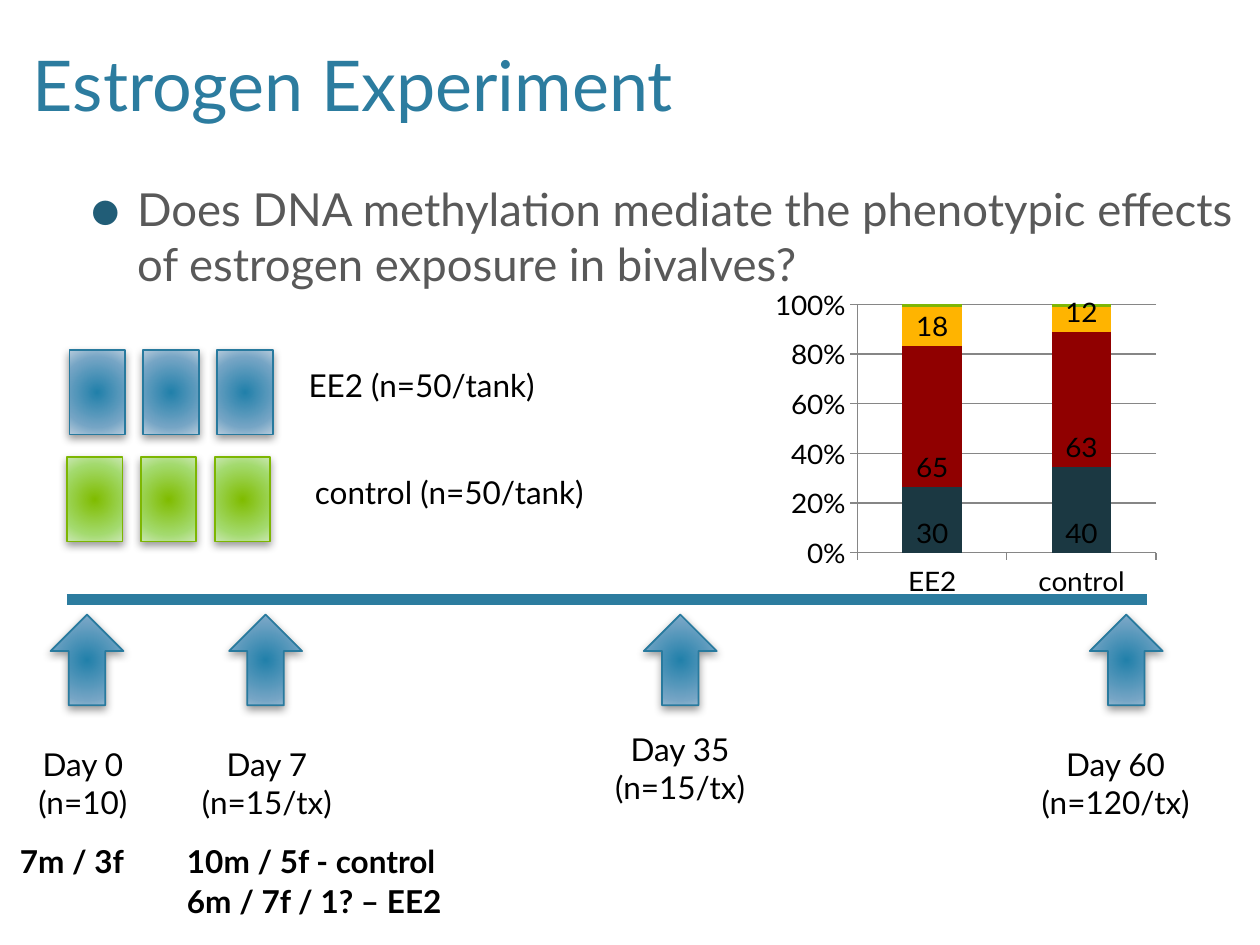
from lxml.etree import SubElement, fromstring
from pptx import Presentation
from pptx.chart.data import CategoryChartData as ChartData
from pptx.dml.color import RGBColor as RGB
from pptx.enum.chart import XL_CHART_TYPE as Kind, XL_LABEL_POSITION as Spot
from pptx.enum.chart import XL_LEGEND_POSITION as Side, XL_TICK_MARK as Tick
from pptx.enum.shapes import MSO_CONNECTOR as Link, MSO_SHAPE as Form
from pptx.enum.text import MSO_ANCHOR as Anchor, MSO_AUTO_SIZE as Fit
from pptx.enum.text import PP_ALIGN as Align
from pptx.oxml.ns import qn
from pptx.util import Cm, Pt

FONT = "Lato"
TEAL = RGB(0x2C, 0x7C, 0x9F)
DEEP = RGB(0x21, 0x5D, 0x77)
GREY = RGB(0x59, 0x59, 0x59)
RULE = RGB(0x86, 0x86, 0x86)
BLACK = RGB(0, 0, 0)
# Edge colour, then the gradient from centre to rim
BLUE = (RGB(0x28, 0x7A, 0x9E),
        (RGB(0x21, 0x80, 0xAA), RGB(0x75, 0xA5, 0xC5), RGB(0xB8, 0xCC, 0xDC)))
GREEN = (RGB(0x7D, 0xB6, 0x02),
         (RGB(0x80, 0xBC, 0x00), RGB(0xA3, 0xDA, 0x6D), RGB(0xCB, 0xE7, 0xB4)))
SERIES = (
    ("M", (30, 40), RGB(0x1B, 0x38, 0x42)),
    ("F", (65, 63), RGB(0x90, 0x00, 0x00)),
    ("U", (18, 12), RGB(0xFF, 0xB4, 0x00)),
    ("H", (1, 1), RGB(0x7E, 0xB6, 0x06)),
)
# Arrow left, label left, label top, label width, lines
DAYS = (
    (0, -0.8, 2.48, 2.9, ("Day 0", "(n=10)")),
    (3.6, 2.57, 2.48, 3.58, ("Day 7", "(n=15/tx)")),
    (11.96, 10.9, 2.18, 3.58, ("Day 35", "(n=15/tx)")),
    (20.95, 19.45, 2.48, 4.04, ("Day 60", "(n=120/tx)")),
)
NS = 'xmlns:a="http://schemas.openxmlformats.org/drawingml/2006/main"'


def place(box):
    return [Cm(n) for n in box]


def style(font, size, color=BLACK, bold=False):
    font.name, font.size, font.bold = FONT, Pt(size), bold
    font.color.rgb = color


def write(para, text, size, color=BLACK, bold=False):
    run = para.add_run()
    run.text = text
    style(run.font, size, color, bold)


def label(slide, box, lines, align=Align.LEFT, bold=False):
    frame = slide.shapes.add_textbox(*place(box)).text_frame
    frame.word_wrap = True
    for i, line in enumerate(lines):
        para = frame.add_paragraph() if i else frame.paragraphs[0]
        para.alignment = align
        write(para, line, 18, bold=bold)


def glow(slide, form, box, tone):
    """Add a shape with a round gradient and a soft shadow."""
    edge, shades = tone
    shape = slide.shapes.add_shape(form, *place(box))
    shape.line.color.rgb = edge
    shape.line.width = Pt(1)
    stops = "".join(f'<a:gs pos="{pos}000"><a:srgbClr val="{shade}"/></a:gs>'
                    for pos, shade in zip((0, 69, 100), shades))
    props = shape.element.spPr
    props.find(qn("a:prstGeom")).addnext(fromstring(
        f'<a:gradFill {NS} rotWithShape="1"><a:gsLst>{stops}</a:gsLst>'
        '<a:path path="circle"><a:fillToRect l="100000" t="100000" '
        'r="100000" b="100000"/></a:path></a:gradFill>'))
    props.append(fromstring(
        f'<a:effectLst {NS}><a:outerShdw blurRad="{Pt(5)}" dist="{Pt(2)}" '
        'dir="5400000" rotWithShape="0"><a:srgbClr val="000000">'
        '<a:alpha val="40000"/></a:srgbClr></a:outerShdw></a:effectLst>'))


def hold(holder, box):
    """Move a placeholder and return its first paragraph."""
    holder.left, holder.top, holder.width, holder.height = place(box)
    frame = holder.text_frame
    frame.auto_size = Fit.NONE
    frame.vertical_anchor = Anchor.TOP
    para = frame.paragraphs[0]
    para.alignment = Align.LEFT
    return para


def head(slide, box):
    write(hold(slide.shapes.title, box), "Estrogen Experiment", 40, TEAL)


def ask(slide, box):
    para = hold(slide.placeholders[1], box)
    para.space_before, para.space_after = Pt(6), Pt(12)
    props = para._p.get_or_add_pPr()
    props.set("marL", str(Cm(1.9)))
    props.set("indent", str(Cm(-0.94)))
    SubElement(SubElement(props, qn("a:buClr")), qn("a:srgbClr"), val=str(DEEP))
    SubElement(props, qn("a:buSzPct"), val="110000")
    SubElement(props, qn("a:buFont"), typeface=FONT)
    SubElement(props, qn("a:buChar"), char="●")
    write(para, "Does DNA methylation mediate the phenotypic effects "
                "of estrogen exposure in bivalves?", 26, GREY)


def tanks(slide, box, tone, text, gap):
    x, y, wide, high = box
    for i in range(3):
        glow(slide, Form.RECTANGLE, (x + 1.49 * i, y, 1.12, high), tone)
    label(slide, (x + gap, y + 0.2, wide - gap, 1.02), [text])


def course(slide, box):
    """Draw the time line with its sampling days."""
    x, y, wide, high = box
    line = slide.shapes.add_connector(
        Link.STRAIGHT, *place((x + 0.33, y, x + 22.1, y)))
    line.line.color.rgb = TEAL
    line.line.width = Pt(6)
    SubElement(line._element.spPr, qn("a:effectLst"))
    for left, side, drop, span, lines in DAYS:
        glow(slide, Form.UP_ARROW, (x + left, y + 0.3, 1.47, 1.83), BLUE)
        label(slide, (x + side, y + 2.8 + drop - 2.48, span, 1.8),
              lines, Align.CENTER)
    base = y + high - 1.84
    label(slide, (x - 1.02, base, 2.9, 1.02), ["7m / 3f"], Align.CENTER, True)
    for i, text in enumerate(("10m / 5f - control", "6m / 7f / 1? – EE2")):
        label(slide, (x + 2.5, base + 0.82 * i, 7.9, 1.02), [text], bold=True)


def layout(plot):
    """Fix the inner plot area as shares of the chart."""
    old = plot.find(qn("c:layout"))
    if old is not None:
        plot.remove(old)
    new = plot.makeelement(qn("c:layout"))
    plot.insert(0, new)
    man = SubElement(new, qn("c:manualLayout"))
    for tag, val in (("layoutTarget", "inner"), ("xMode", "edge"),
                     ("yMode", "edge"), ("x", "0.162"), ("y", "0.044"),
                     ("w", "0.528"), ("h", "0.843")):
        SubElement(man, qn("c:" + tag), val=val)


def bars(slide, box):
    data = ChartData()
    data.categories = ["EE2", "control"]
    for name, vals, _ in SERIES:
        data.add_series(name, vals)
    chart = slide.shapes.add_chart(
        Kind.COLUMN_STACKED_100, *place(box), data).chart
    style(chart.font, 16)
    chart.has_title = False
    chart.has_legend = True
    chart.legend.position = Side.RIGHT
    chart.legend.include_in_layout = False
    plot = chart.plots[0]
    plot.gap_width, plot.overlap = 150, 100
    plot.vary_by_categories = False
    for ser, (name, _, color) in zip(plot.series, SERIES):
        ser.format.fill.solid()
        ser.format.fill.fore_color.rgb = color
        if name != "H":
            ser.data_labels.show_value = True
            ser.data_labels.position = Spot.INSIDE_BASE
    for axis in (chart.category_axis, chart.value_axis):
        axis.major_tick_mark = Tick.OUTSIDE
        axis.minor_tick_mark = Tick.NONE
        axis.format.line.color.rgb = RULE
    axis.has_major_gridlines = True
    axis.major_gridlines.format.line.color.rgb = RULE
    axis.major_unit = 0.2
    axis.tick_labels.number_format = "0%"
    axis.tick_labels.number_format_is_linked = False
    layout(chart._chartSpace.chart.plotArea)


def main():
    deck = Presentation()
    deck.slide_width, deck.slide_height = Cm(25.4), Cm(19.05)
    slide = deck.slides.add_slide(deck.slide_layouts[1])
    head(slide, (0.41, 0.71, 24.99, 2.82))
    ask(slide, (0.61, 3.53, 24.79, 2.9))
    tanks(slide, (1.4, 7.06, 12.3, 1.7), BLUE, "EE2 (n=50/tank)", 4.57)
    tanks(slide, (1.35, 9.22, 12.5, 1.7), GREEN, "control (n=50/tank)", 4.75)
    course(slide, (1.02, 12.09, 23.5, 6.59))
    bars(slide, (15.44, 5.82, 11.4, 6.2))
    deck.save("out.pptx")


if __name__ == "__main__":
    main()
